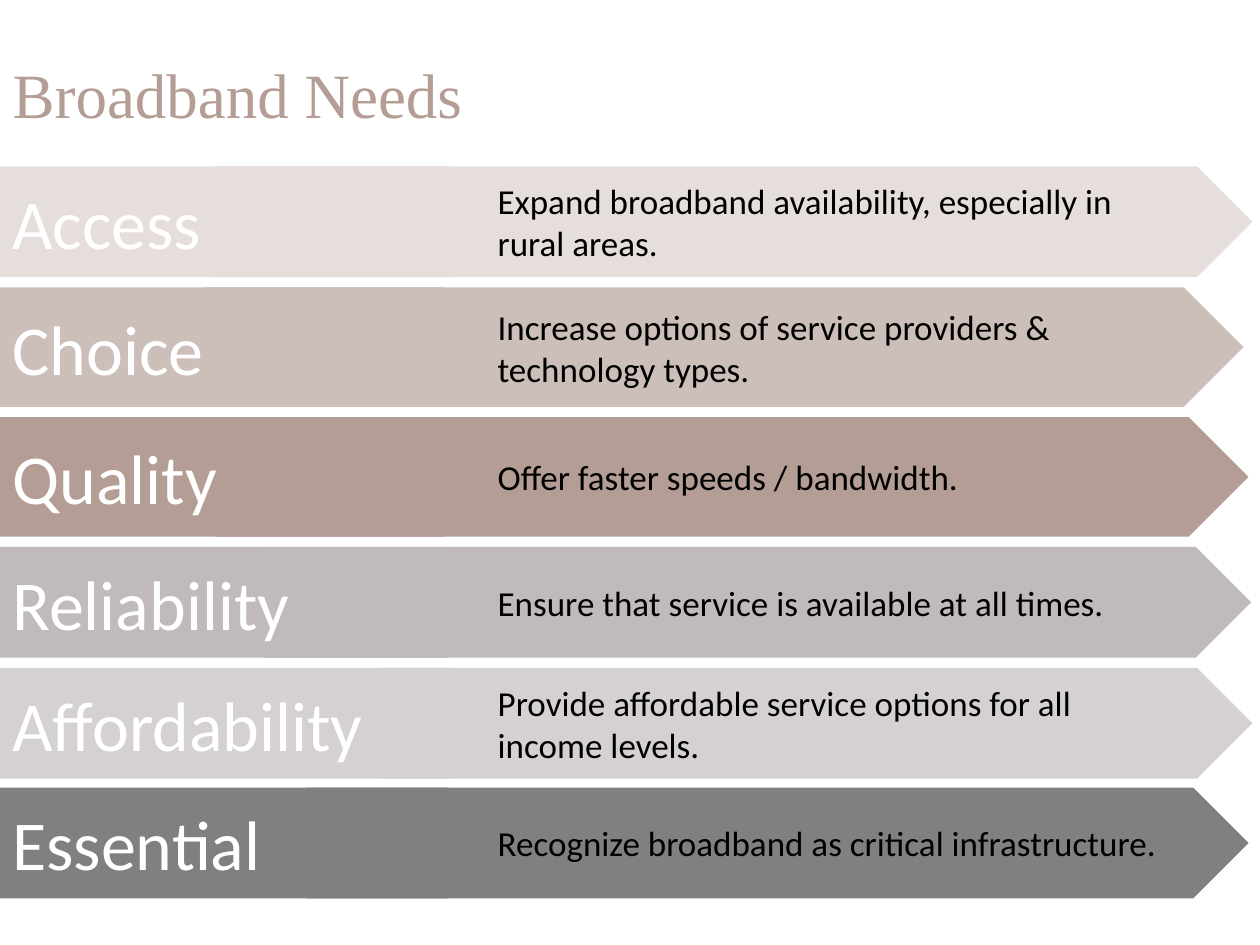
from pptx import Presentation
from pptx import util as u
from pptx.dml import color
from pptx.enum import shapes, text

COLORS = {
    "access": "E6DEDB",
    "choice": "CCBEB8",
    "quality": "B39D94",
    "reliability": "C0BABA",
    "affordability": "D5D1D1",
    "essential": "808080",
    "label": "FFFFFF",
    "description": "000000",
}

FORMATS = {
    "title": {"size": u.Pt(36), "name": "Times New Roman"},
    "label": {"size": u.Pt(40), "name": "Calibri"},
    "description": {"size": u.Pt(20), "name": "Calibri"},
}

LABEL_WIDTH = 4
DESCRIPTION_LEFT = 3.95  # shared left edge of all descriptions

# Label, top, height, chevron left, chevron width, description lines
NEEDS = [
    ("Access", 1.32, 0.88, 1.71, 8.23,
     ["Expand broadband availability, especially in", "rural areas."]),
    ("Choice", 2.28, 0.95, 1.61, 8.26,
     ["Increase options of service providers &", "technology types."]),
    ("Quality", 3.31, 0.95, 1.71, 8.2,
     ["Offer faster speeds / bandwidth."]),
    ("Reliability", 4.34, 0.88, 2.08, 7.85,
     ["Ensure that service is available at all times."]),
    ("Affordability", 5.3, 0.88, 3.02, 6.92,
     ["Provide affordable service options for all", "income levels."]),
    ("Essential", 6.25, 0.88, 2.43, 7.48,
     ["Recognize broadband as critical infrastructure."]),
]


def write_lines(frame, lines, style, color_name):
    """Write one left-aligned paragraph for each line."""
    for index, line in enumerate(lines):
        paragraph = frame.add_paragraph() if index else frame.paragraphs[0]
        paragraph.text = line
        paragraph.alignment = text.PP_ALIGN.LEFT
        for name, value in FORMATS[style].items():
            setattr(paragraph.font, name, value)
        paragraph.font.color.rgb = color.RGBColor.from_string(COLORS[color_name])


def add_band(slide, kind, left, top, width, height, fill):
    """Add a plain filled arrow shape."""
    shape = slide.shapes.add_shape(
        kind, *(u.Inches(value) for value in (left, top, width, height)))
    shape.shadow.inherit = False
    shape.fill.solid()
    shape.fill.fore_color.rgb = color.RGBColor.from_string(COLORS[fill])
    shape.line.fill.background()
    shape.text_frame.vertical_anchor = text.MSO_ANCHOR.MIDDLE
    return shape


def add_label(slide, label, top, height):
    shape = add_band(slide, shapes.MSO_SHAPE.PENTAGON, 0, top, LABEL_WIDTH,
                     height, label.lower())
    write_lines(shape.text_frame, [label], "label", "label")


def add_description(slide, label, top, height, left, width, lines):
    shape = add_band(slide, shapes.MSO_SHAPE.CHEVRON, left, top, width,
                     height, label.lower())
    # The chevron's text area starts half its height in from the left
    shape.text_frame.margin_left = u.Inches(DESCRIPTION_LEFT - left - height / 2)
    write_lines(shape.text_frame, lines, "description", "description")


def add_title(slide, title):
    shape = slide.shapes.title
    box = {"left": 0, "top": 0.39, "width": 10, "height": 0.71}
    for name, value in box.items():
        setattr(shape, name, u.Inches(value))
    shape.text_frame.vertical_anchor = text.MSO_ANCHOR.TOP
    write_lines(shape.text_frame, [title], "title", "quality")


def main():
    presentation = Presentation()
    presentation.slide_width = u.Inches(10)
    presentation.slide_height = u.Inches(7.5)
    slide = presentation.slides.add_slide(presentation.slide_layouts[5])

    # Title
    add_title(slide, "Broadband Needs")

    # Labels lie behind the chevrons
    for label, top, height, *_ in reversed(NEEDS):
        add_label(slide, label, top, height)

    # Descriptions
    for need in reversed(NEEDS):
        add_description(slide, *need)

    presentation.save("out.pptx")


if __name__ == "__main__":
    main()
